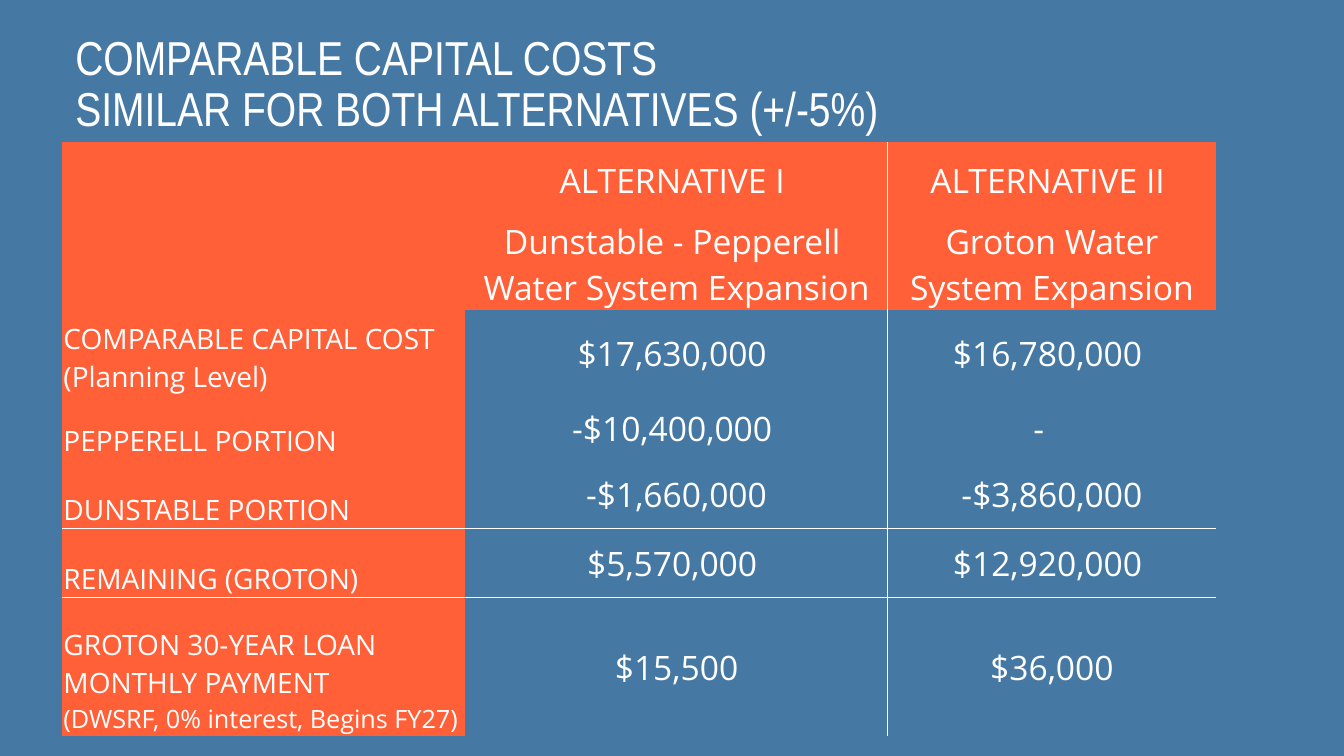
import pptx
import pptx.util
import pptx.dml.color
import pptx.enum.text
import pptx.oxml
import pptx.oxml.ns

Cm = pptx.util.Cm
Pt = pptx.util.Pt
ANCHOR = pptx.enum.text.MSO_ANCHOR
ALIGN = pptx.enum.text.PP_ALIGN
COLORS = {"background": "4678A4", "label": "FF6038", "white": "FFFFFF"}
NO_STYLE = "{2D5ABB26-0587-4C30-8999-92F81FD0307C}"

COLUMN_WIDTHS = [10.16, 10.64, 8.28]
ROW_HEIGHTS = [1.9, 2.0, 2.15, 1.6, 1.74, 1.74, 3.5]
# Each cell is a list of paragraphs
ROWS = [
    [[], ["ALTERNATIVE I "], ["ALTERNATIVE II "]],
    [[], ["Dunstable - Pepperell ", "Water System Expansion"],
     ["Groton Water", " System Expansion "]],
    [["COMPARABLE CAPITAL COST (Planning Level)"], ["$17,630,000 "], ["$16,780,000 "]],
    [["PEPPERELL PORTION"], ["-$10,400,000 "], ["-"]],
    [["DUNSTABLE PORTION"], ["-$1,660,000"], ["-$3,860,000"]],
    [["REMAINING (GROTON)"], ["$5,570,000 "], ["$12,920,000 "]],
    [["GROTON 30-YEAR LOAN MONTHLY PAYMENT", "(DWSRF, 0% interest, Begins FY27)"],
     ["$15,500"], ["$36,000"]],
]
HEADER_ROWS = 2
SUBTOTAL_ROW = 5


def add_run(paragraph, text, size, font_name):
    run = paragraph.add_run()
    run.text = text
    run.font.size = Pt(size)
    run.font.name = font_name
    run.font.color.rgb = pptx.dml.color.RGBColor.from_string(COLORS["white"])


def add_borders(cell, sides):
    """Draw white lines on the given sides, listed in the order L, R, T, B."""
    for side in sides:
        cell._tc.get_or_add_tcPr().append(pptx.oxml.parse_xml(
            f'<a:ln{side} {pptx.oxml.ns.nsdecls("a")} w="12700"><a:solidFill>'
            f'<a:srgbClr val="{COLORS["white"]}"/></a:solidFill></a:ln{side}>'))


presentation = pptx.Presentation()
presentation.slide_width = Cm(33.87)
presentation.slide_height = Cm(19.05)
slide = presentation.slides.add_slide(presentation.slide_layouts[6])
slide.background.fill.solid()
slide.background.fill.fore_color.rgb = pptx.dml.color.RGBColor.from_string(COLORS["background"])

# Cost table
table = slide.shapes.add_table(
    len(ROWS), len(COLUMN_WIDTHS), Cm(1.57), Cm(3.58),
    Cm(sum(COLUMN_WIDTHS)), Cm(sum(ROW_HEIGHTS))).table
table.first_row = False
table.horz_banding = False
table._tbl.tblPr.find(pptx.oxml.ns.qn("a:tableStyleId")).text = NO_STYLE
for column, width in zip(table.columns, COLUMN_WIDTHS):
    column.width = Cm(width)
for row, height in zip(table.rows, ROW_HEIGHTS):
    row.height = Cm(height)

for row_index, row_texts in enumerate(ROWS):
    for column_index, texts in enumerate(row_texts):
        cell = table.cell(row_index, column_index)
        is_label = column_index == 0
        cell.margin_left = cell.margin_right = cell.margin_top = Cm(0.03)
        cell.margin_bottom = 0
        cell.vertical_anchor = ANCHOR.BOTTOM if is_label else ANCHOR.MIDDLE

        sides = ["", "R", "L"][column_index]
        if row_index == SUBTOTAL_ROW:
            sides += "T"
        elif row_index == SUBTOTAL_ROW - 1:
            sides += "B"
        add_borders(cell, sides)

        if is_label or row_index < HEADER_ROWS:
            cell.fill.solid()
            cell.fill.fore_color.rgb = pptx.dml.color.RGBColor.from_string(COLORS["label"])
        else:
            cell.fill.background()

        for index, text in enumerate(texts):
            frame = cell.text_frame
            paragraph = frame.add_paragraph() if index else frame.paragraphs[0]
            paragraph.alignment = ALIGN.LEFT if is_label else ALIGN.CENTER
            size = (18 if index else 20) if is_label else 24
            add_run(paragraph, text, size, "Open Sans")

table.cell(0, 0).merge(table.cell(1, 0))
table.cell(3, 2).margin_right = Cm(0.7)  # The lone dash sits left of centre

# Title
title = slide.shapes.add_textbox(Cm(1.65), Cm(0.79), Cm(30.56), Cm(2.79))
title.text_frame.word_wrap = True
title.text_frame.vertical_anchor = ANCHOR.BOTTOM
paragraph = title.text_frame.paragraphs[0]
paragraph.line_spacing = 0.9
add_run(paragraph, "COMPARABLE CAPITAL COSTS ", 34, "Arial Narrow")
paragraph.add_line_break()
add_run(paragraph, "SIMILAR FOR BOTH ALTERNATIVES (+/-5%)", 34, "Arial Narrow")

presentation.save("out.pptx")
